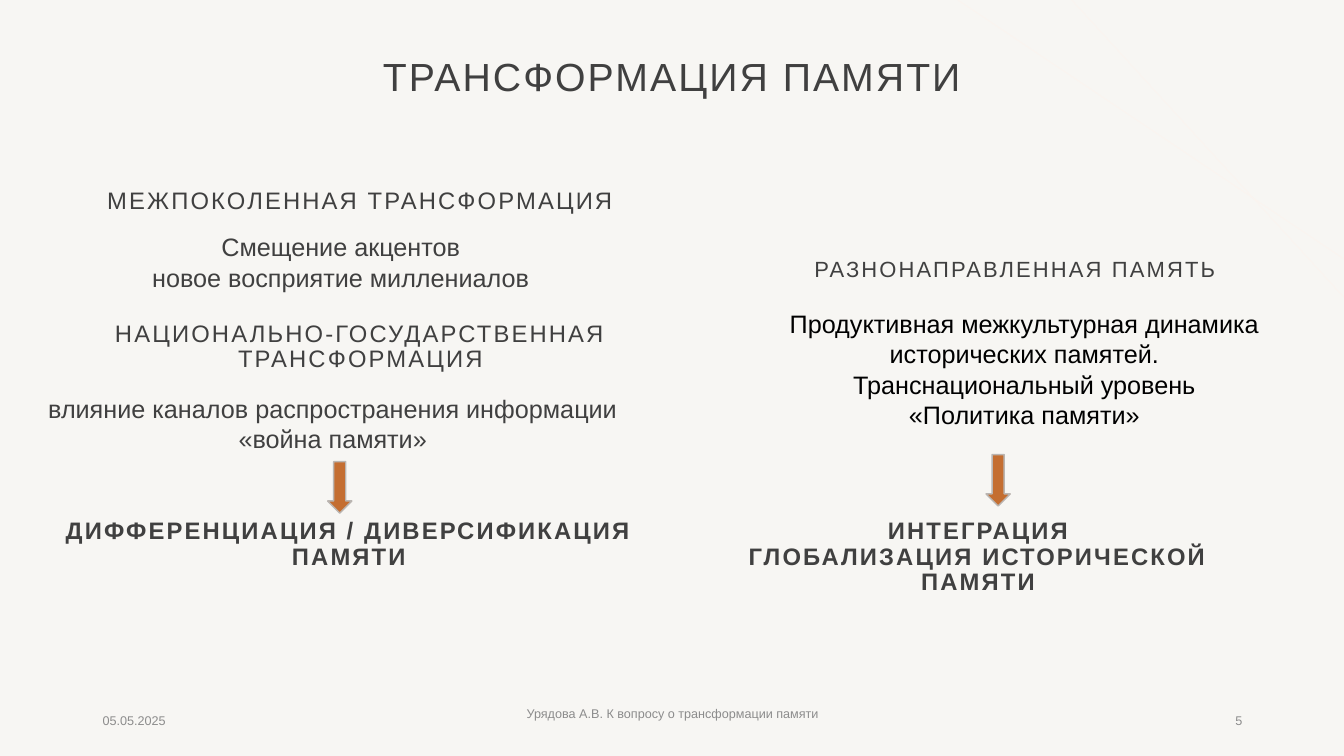
from dataclasses import dataclass

from pptx import Presentation
from pptx import util as u
from pptx.dml.color import RGBColor
from pptx.enum import shapes, text
from pptx.oxml.ns import qn

ALIGN = text.PP_ALIGN
ANCHOR = text.MSO_ANCHOR


@dataclass(frozen=True)
class Theme:
    font: str = "Arial"
    background: str = "F7F6F3"
    ink: str = "404040"
    black: str = "000000"
    muted: str = "8C8C8C"
    arrow: str = "C46E31"
    arrow_edge: str = "BAB5B1"
    ray: str = "FBF4EF"
    title: float = 28
    heading: float = 17
    small_heading: float = 15.7
    body: float = 18
    footer: float = 9
    tracking: float = 1.5


def apply_format(target, values):
    for name, value in values.items():
        setattr(target, name, value)


class SlideBuilder:
    def __init__(self, page, theme):
        self.page = page
        self.theme = theme
        fill = page.background.fill
        fill.solid()
        fill.fore_color.rgb = RGBColor.from_string(theme.background)

    def label(self, place, lines, size, color=None, bold=False, tracking=0,
              spacing=1.0, align=ALIGN.CENTER, anchor=ANCHOR.TOP):
        box = self.page.shapes.add_textbox(*map(u.Inches, place))
        frame = box.text_frame
        apply_format(frame, {"word_wrap": True, "vertical_anchor": anchor})
        for index, line in enumerate(lines):
            para = frame.paragraphs[0] if index == 0 else frame.add_paragraph()
            apply_format(para, {"alignment": align, "line_spacing": spacing})
            span = para.add_run()
            span.text = line
            apply_format(span.font, {"name": self.theme.font, "size": u.Pt(size), "bold": bold})
            span.font.color.rgb = RGBColor.from_string(color or self.theme.ink)
            if tracking:
                span.font._element.set("spc", str(int(tracking * 100)))

    def heading(self, place, lines, size=None, bold=False, spacing=0.9, anchor=ANCHOR.TOP):
        self.label(place, lines, size or self.theme.heading, bold=bold,
                   tracking=self.theme.tracking, spacing=spacing, anchor=anchor)

    def body(self, place, lines, color=None):
        self.label(place, lines, self.theme.body, color)

    def footer(self, place, line, align):
        self.label(place, [line], self.theme.footer, self.theme.muted,
                   align=align, anchor=ANCHOR.MIDDLE)

    def down_arrow(self, left, top):
        place = map(u.Inches, (left, top, 0.24, 0.51))
        arrow = self.page.shapes.add_shape(shapes.MSO_SHAPE.DOWN_ARROW, *place)
        arrow.shadow.inherit = False
        arrow.fill.solid()
        arrow.fill.fore_color.rgb = RGBColor.from_string(self.theme.arrow)
        arrow.line.color.rgb = RGBColor.from_string(self.theme.arrow_edge)
        arrow.line.width = u.Pt(1)

    def ray(self, start, end):
        ray = self.page.shapes.add_connector(
            shapes.MSO_CONNECTOR.STRAIGHT, *map(u.Inches, (*start, *end)))
        ray.line.color.rgb = RGBColor.from_string(self.theme.ray)
        ray.line.width = u.Pt(0.5)
        properties = ray._element.spPr
        properties.append(properties.makeelement(qn("a:effectLst"), {}))


def main():
    deck = Presentation()
    apply_format(deck, {"slide_width": u.Inches(13.33), "slide_height": u.Inches(7.5)})
    theme = Theme()
    slide = SlideBuilder(deck.slides.add_slide(deck.slide_layouts[6]), theme)

    slide.ray((9.5, 0), (13.33, 2.57))
    slide.ray((10.63, 0), (13.33, 2.95))
    slide.heading((2.06, 0.22, 9.21, 1.13), ["ТРАНСФОРМАЦИЯ ПАМЯТИ"],
                  size=theme.title, anchor=ANCHOR.MIDDLE)

    slide.heading((0.75, 1.85, 5.64, 0.49), ["МЕЖПОКОЛЕННАЯ ТРАНСФОРМАЦИЯ"], spacing=0.8)
    slide.body((0.73, 2.25, 5.3, 0.91), ["Смещение акцентов", "новое восприятие миллениалов"])
    slide.heading((1.04, 3.14, 5.07, 0.81), ["НАЦИОНАЛЬНО-ГОСУДАРСТВЕННАЯ ТРАНСФОРМАЦИЯ"])
    slide.body((0.24, 3.85, 6.12, 0.71),
               ["влияние каналов распространения информации", "«война памяти»"])
    slide.down_arrow(3.25, 4.58)
    slide.heading((0.51, 5.1, 5.9, 0.87), ["ДИФФЕРЕНЦИАЦИЯ / ДИВЕРСИФИКАЦИЯ ПАМЯТИ"], bold=True)

    slide.heading((7.86, 2.52, 4.41, 0.4), ["РАЗНОНАПРАВЛЕННАЯ ПАМЯТЬ"], size=theme.small_heading)
    slide.body((7.6, 3.01, 5.12, 1.31),
               ["Продуктивная межкультурная динамика исторических памятей. "
                "Транснациональный уровень", "«Политика памяти»"], theme.black)
    slide.down_arrow(9.78, 4.51)
    slide.heading((6.75, 5.1, 5.9, 0.87),
                  ["ИНТЕГРАЦИЯ", "ГЛОБАЛИЗАЦИЯ ИСТОРИЧЕСКОЙ ПАМЯТИ"], bold=True)

    slide.footer((0.92, 6.95, 3, 0.4), "05.05.2025", ALIGN.LEFT)
    slide.footer((4.42, 6.88, 4.5, 0.4), "Урядова А.В. К вопросу о трансформации памяти",
                 ALIGN.CENTER)
    slide.footer((9.42, 6.95, 3, 0.4), "5", ALIGN.RIGHT)
    deck.save("out.pptx")


if __name__ == "__main__":
    main()
